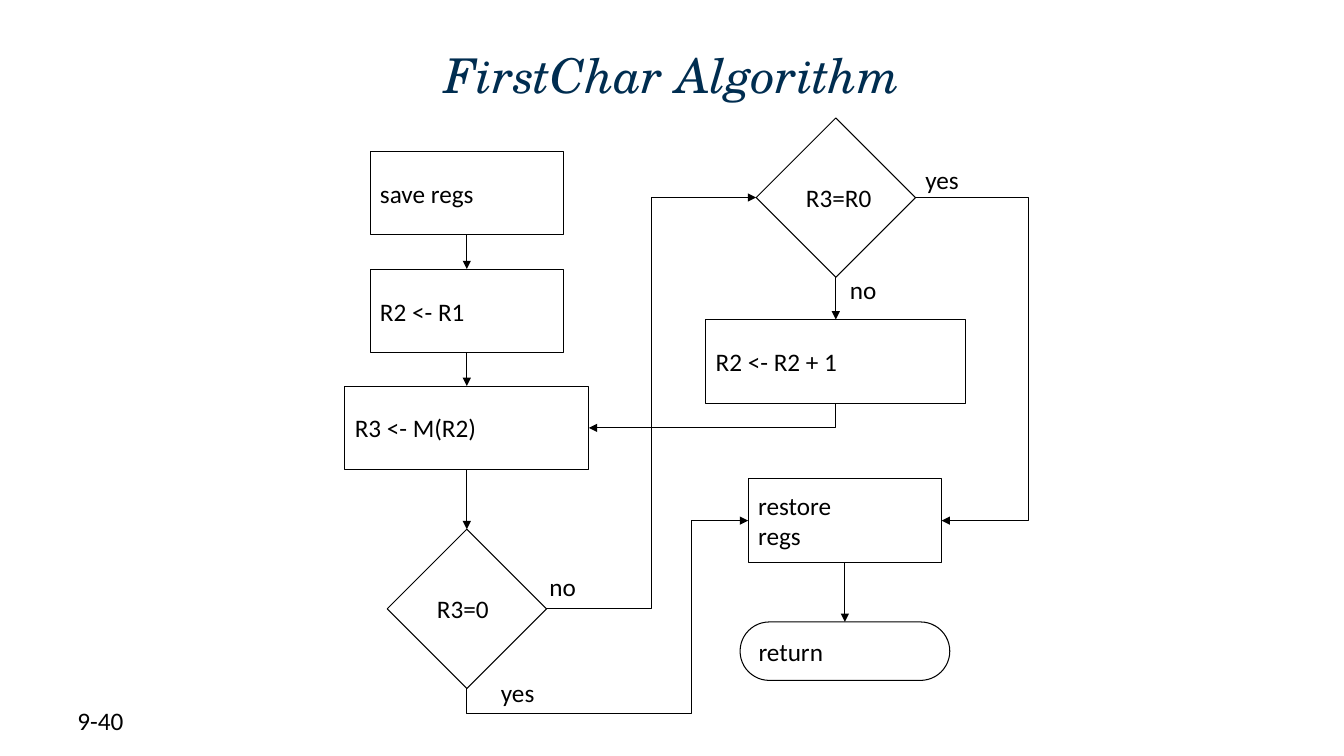
from lxml.etree import SubElement
from pptx import Presentation
from pptx.dml.color import RGBColor
from pptx.enum.shapes import MSO_CONNECTOR as Connector, MSO_SHAPE as Shape
from pptx.enum.text import MSO_ANCHOR as Anchor, MSO_AUTO_SIZE as AutoSize, PP_ALIGN as Align
from pptx.oxml.ns import qn
from pptx.util import Inches, Pt

BLACK = "000000"
TOP, LEFT, BOTTOM, RIGHT = range(4)  # connection sites
LEFT_AXIS, RIGHT_AXIS, EXIT_AXIS = 4.63, 8.29, 8.38
STEP_HEIGHT, DIAMOND_SIZE = 0.83, 1.58

# name: shape, centre x, top, width, height, text
NODES = {
    "save": (Shape.RECTANGLE, LEFT_AXIS, 1.5, 1.92, STEP_HEIGHT, "save regs"),
    "start": (Shape.RECTANGLE, LEFT_AXIS, 2.67, 1.92, STEP_HEIGHT, "R2 <- R1"),
    "load": (Shape.RECTANGLE, LEFT_AXIS, 3.83, 2.42, STEP_HEIGHT, "R3 <- M(R2)"),
    "end test": (Shape.DIAMOND, LEFT_AXIS, 5.25, DIAMOND_SIZE, DIAMOND_SIZE, "R3=0"),
    "match test": (Shape.DIAMOND, RIGHT_AXIS, 1.17, DIAMOND_SIZE, DIAMOND_SIZE, "R3=R0"),
    "next": (Shape.RECTANGLE, RIGHT_AXIS, 3.17, 2.58, STEP_HEIGHT, "R2 <- R2 + 1"),
    "restore": (Shape.RECTANGLE, EXIT_AXIS, 4.75, 1.92, STEP_HEIGHT, "restore\nregs"),
    "return": (Shape.ROUNDED_RECTANGLE, EXIT_AXIS, 6.17, 2.08, 0.58, "return"),
}
STRAIGHT_ARROWS = [
    ("save", "start"), ("start", "load"), ("load", "end test"),
    ("match test", "next"), ("restore", "return"),
]
# from, site, to, site, bend positions as shares of the connector's size
BENT_ARROWS = [
    ("end test", RIGHT, "match test", LEFT, [0.5]),
    ("end test", BOTTOM, "restore", LEFT, [-0.15, 0.8]),
    ("next", BOTTOM, "load", RIGHT, []),
    ("match test", RIGHT, "restore", RIGHT, [4.3]),
]
BRANCH_LABELS = [
    ("no", 5.35, 5.62, 0.48), ("no", 8.33, 2.67, 0.48),
    ("yes", 4.87, 6.67, 0.54), ("yes", 9.08, 1.58, 0.54),
]


def color(hex_value):
    return RGBColor.from_string(hex_value)


def write(frame, text, size=18, font="Calibri", hex_value=BLACK, italic=False,
          align=Align.LEFT, anchor=Anchor.TOP, wrap=False):
    frame.text = text
    frame.word_wrap = wrap
    frame.auto_size = AutoSize.NONE
    frame.vertical_anchor = anchor
    for paragraph in frame.paragraphs:
        paragraph.alignment = align
        paragraph.font.size = Pt(size)
        paragraph.font.name = font
        paragraph.font.italic = italic
        paragraph.font.color.rgb = color(hex_value)


def add_label(slide, text, left, top, width, height=0.4):
    box = slide.shapes.add_textbox(*map(Inches, (left, top, width, height)))
    write(box.text_frame, text)


def add_title(slide, text, left, top, width, height):
    title = slide.shapes.title
    title.left, title.top, title.width, title.height = map(Inches, (left, top, width, height))
    write(title.text_frame, text, size=34.2, font="TeX Gyre Schola", hex_value="002D50",
          italic=True, align=Align.CENTER, anchor=Anchor.MIDDLE, wrap=True)


def style_line(line):
    line.color.rgb = color(BLACK)
    line.width = Pt(0.75)


def add_node(slide, kind, center, top, width, height, text):
    box = map(Inches, (center - width / 2, top, width, height))
    shape = slide.shapes.add_shape(kind, *box)
    if kind == Shape.ROUNDED_RECTANGLE:
        shape.adjustments[0] = 0.5
    shape.shadow.inherit = False
    shape.fill.background()
    style_line(shape.line)
    write(shape.text_frame, text, anchor=Anchor.MIDDLE)
    return shape


def add_arrow(slide, source, source_site, target, target_site, kind=Connector.STRAIGHT):
    arrow = slide.shapes.add_connector(kind, 0, 0, 0, 0)
    arrow.begin_connect(source, source_site)
    arrow.end_connect(target, target_site)
    style_line(arrow.line)
    properties = arrow._element.spPr
    SubElement(properties.find(qn("a:ln")), qn("a:tailEnd"), type="triangle")
    SubElement(properties, qn("a:effectLst"))
    return arrow


def turn_down(arrow):
    """Rotate an elbow by 90 degrees about its centre, so that it leaves downwards."""
    x1, y1, x2, y2 = arrow.begin_x, arrow.begin_y, arrow.end_x, arrow.end_y
    center_x, center_y = (x1 + x2) // 2, (y1 + y2) // 2
    arrow.begin_x, arrow.begin_y = center_x + y1 - center_y, center_y - x1 + center_x
    arrow.end_x, arrow.end_y = center_x + y2 - center_y, center_y - x2 + center_x
    arrow._element.spPr.find(qn("a:xfrm")).set("rot", str(90 * 60000))


def add_bent_arrow(slide, source, source_site, target, target_site, bends):
    arrow = add_arrow(slide, source, source_site, target, target_site, Connector.ELBOW)
    if source_site == BOTTOM:
        turn_down(arrow)
    geometry = arrow._element.spPr.find(qn("a:prstGeom"))
    geometry.set("prst", f"bentConnector{len(bends) + 2}")
    guides = geometry.find(qn("a:avLst"))
    for number, bend in enumerate(bends, 1):
        SubElement(guides, qn("a:gd"), name=f"adj{number}", fmla=f"val {round(bend * 100000)}")


def add_flowchart(slide):
    nodes = {name: add_node(slide, *node) for name, node in NODES.items()}
    for source, target in STRAIGHT_ARROWS:
        add_arrow(slide, nodes[source], BOTTOM, nodes[target], TOP)
    for source, source_site, target, target_site, bends in BENT_ARROWS:
        add_bent_arrow(slide, nodes[source], source_site, nodes[target], target_site, bends)
    for label in BRANCH_LABELS:
        add_label(slide, *label)


def main():
    presentation = Presentation()
    presentation.slide_width, presentation.slide_height = Inches(13.33), Inches(7.5)
    slide = presentation.slides.add_slide(presentation.slide_layouts[5])
    add_title(slide, "FirstChar Algorithm", 0.67, 0.38, 12, 0.72)
    add_flowchart(slide)
    add_label(slide, "9-40", 0.67, 6.95, 3.11)
    presentation.save("out.pptx")


if __name__ == "__main__":
    main()
